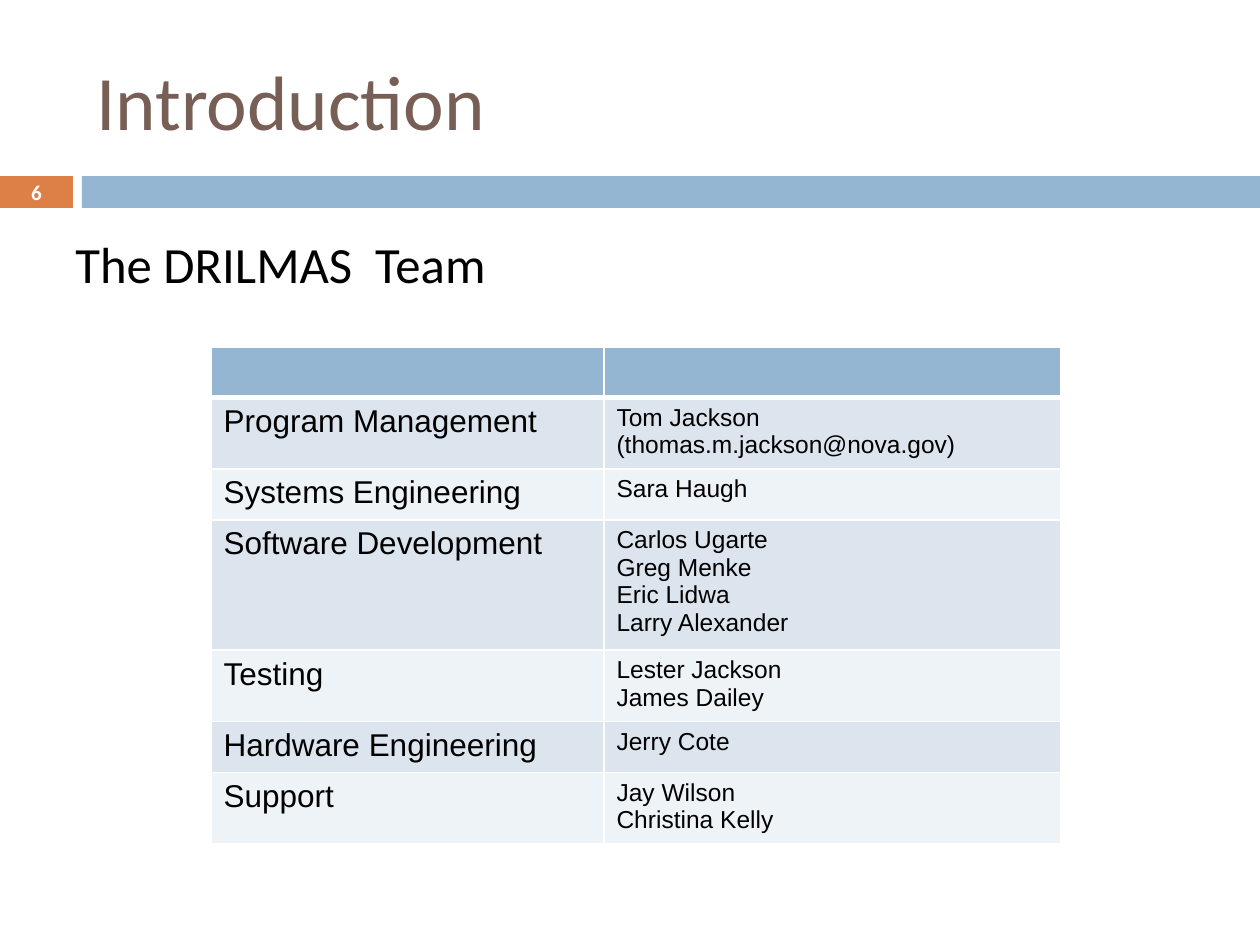
from dataclasses import dataclass

import lxml.etree
import pptx
import pptx.dml.color
import pptx.enum.shapes
import pptx.enum.text
import pptx.oxml.ns
import pptx.util

EMU_PER_PX = 914400 / 126
ALIGN = pptx.enum.text.PP_ALIGN
ANCHOR = pptx.enum.text.MSO_ANCHOR


@dataclass(frozen=True)
class Theme:
    blue: str = "94B6D2"
    orange: str = "DD8047"
    brown: str = "775F55"
    black: str = "000000"
    white: str = "FFFFFF"
    bands: tuple[str, str] = ("DCE5EE", "EEF3F7")
    heading_font: str = "Calibri"
    table_font: str = "Arial"
    title_size: int = 44
    body_size: int = 29
    role_size: int = 18
    member_size: int = 14
    number_size: int = 12


@dataclass(frozen=True)
class Box:
    left: int
    top: int
    width: int
    height: int


@dataclass(frozen=True)
class Label:
    text: str
    box: Box
    size: int
    color: str
    bold: bool = False
    align: ALIGN = ALIGN.LEFT
    anchor: ANCHOR = ANCHOR.MIDDLE
    space_before: int = 0


@dataclass(frozen=True)
class TeamRow:
    role: str
    members: str
    height: int


THEME = Theme()
NUMBER_BOX = Box(0, 176, 73, 32)

BARS = [
    (NUMBER_BOX, THEME.orange),
    (Box(82, 176, 1178, 32), THEME.blue),
]

LABELS = [
    Label("Introduction", Box(84, 32, 1124, 136), THEME.title_size, THEME.brown),
    Label("The DRILMAS  Team", Box(63, 227, 1134, 90), THEME.body_size,
          THEME.black, anchor=ANCHOR.TOP, space_before=7),
    Label("6", NUMBER_BOX, THEME.number_size, THEME.white, bold=True,
          align=ALIGN.CENTER),
]

# "\v" breaks a line, "\n" starts a paragraph; the first row is the empty header
TEAM_ROWS = [
    TeamRow("", "", 50),
    TeamRow("Program Management", "Tom Jackson\v(thomas.m.jackson@nova.gov)", 68),
    TeamRow("Systems Engineering", "Sara Haugh", 51),
    TeamRow("Software Development",
            "Carlos Ugarte\vGreg Menke\vEric Lidwa\vLarry Alexander", 122),
    TeamRow("Testing", "Lester Jackson\nJames Dailey", 68),
    TeamRow("Hardware Engineering", "Jerry Cote", 51),
    TeamRow("Support", "Jay Wilson\vChristina Kelly".replace("\v", "\n"), 68),
]
TABLE_LEFT, TABLE_TOP = 211, 347
COLUMN_WIDTHS = (393, 457)


def px(length: int) -> int:
    return round(length * EMU_PER_PX)


def place(box: Box) -> tuple[int, int, int, int]:
    return px(box.left), px(box.top), px(box.width), px(box.height)


def rgb(color: str) -> pptx.dml.color.RGBColor:
    return pptx.dml.color.RGBColor.from_string(color)


def format_runs(text_frame, font: str, size: int, color: str, bold: bool = False) -> None:
    for paragraph in text_frame.paragraphs:
        for run in paragraph.runs:
            run.font.name = font
            run.font.size = pptx.util.Pt(size)
            run.font.bold = bold
            run.font.color.rgb = rgb(color)


def draw_bar(slide, box: Box, color: str) -> None:
    shape = slide.shapes.add_shape(
        pptx.enum.shapes.MSO_SHAPE.RECTANGLE, *place(box))
    shape.shadow.inherit = False
    shape.fill.solid()
    shape.fill.fore_color.rgb = rgb(color)
    shape.line.fill.background()


def draw_label(slide, label: Label) -> None:
    text_frame = slide.shapes.add_textbox(*place(label.box)).text_frame
    text_frame.word_wrap = True
    text_frame.vertical_anchor = label.anchor
    text_frame.text = label.text
    paragraph = text_frame.paragraphs[0]
    paragraph.alignment = label.align
    paragraph.space_before = pptx.util.Pt(label.space_before)
    format_runs(text_frame, THEME.heading_font, label.size, label.color, label.bold)


def set_borders(cell, top: int, bottom: int) -> None:
    properties = cell._tc.get_or_add_tcPr()
    qn = pptx.oxml.ns.qn
    for side, points in (("L", 1), ("R", 1), ("T", top), ("B", bottom)):
        line = lxml.etree.SubElement(
            properties, qn(f"a:ln{side}"), w=str(pptx.util.Pt(points)))
        fill = lxml.etree.SubElement(line, qn("a:solidFill"))
        lxml.etree.SubElement(fill, qn("a:srgbClr"), val=THEME.white)


def draw_team_table(slide, rows: list[TeamRow]) -> None:
    box = Box(TABLE_LEFT, TABLE_TOP, sum(COLUMN_WIDTHS),
              sum(row.height for row in rows))
    table = slide.shapes.add_table(
        len(rows), len(COLUMN_WIDTHS), *place(box)).table
    for column, width in zip(table.columns, COLUMN_WIDTHS):
        column.width = px(width)

    for index, row in enumerate(rows):
        table.rows[index].height = px(row.height)
        color = THEME.blue if index == 0 else THEME.bands[(index - 1) % 2]
        contents = ((row.role, THEME.role_size), (row.members, THEME.member_size))
        for cell, (text, size) in zip(table.rows[index].cells, contents):
            # A thick rule separates the header from the team
            set_borders(cell, top=3 if index == 1 else 1,
                        bottom=3 if index == 0 else 1)
            cell.fill.solid()
            cell.fill.fore_color.rgb = rgb(color)
            cell.text_frame.text = text
            format_runs(cell.text_frame, THEME.table_font, size, THEME.black)


def main() -> None:
    presentation = pptx.Presentation()
    presentation.slide_width = px(1260)
    presentation.slide_height = px(945)
    slide = presentation.slides.add_slide(presentation.slide_layouts[6])

    # Band under the title
    for box, color in BARS:
        draw_bar(slide, box, color)

    # Title, subtitle and slide number
    for label in LABELS:
        draw_label(slide, label)

    # Team roles and members
    draw_team_table(slide, TEAM_ROWS)

    presentation.save("out.pptx")


if __name__ == "__main__":
    main()
